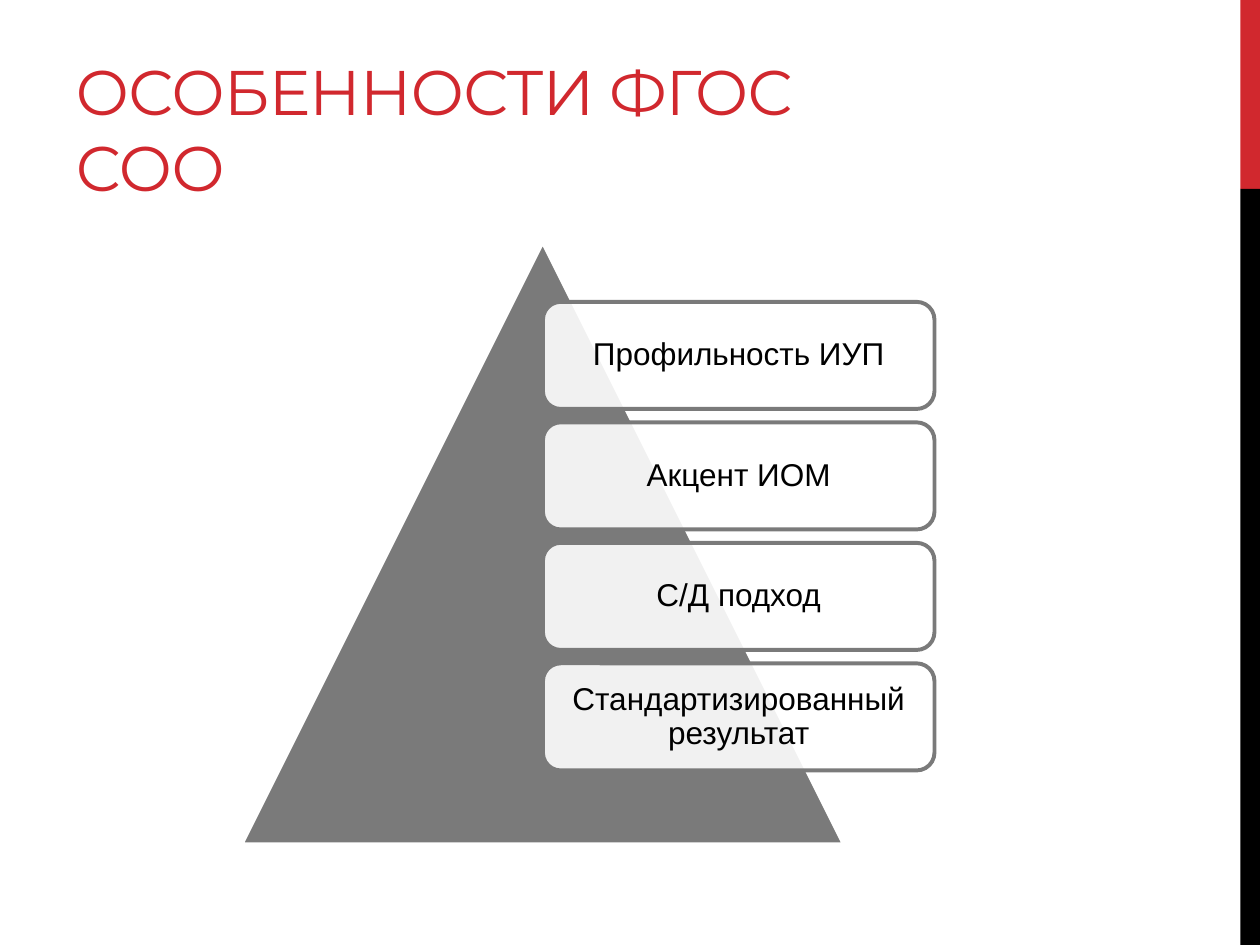
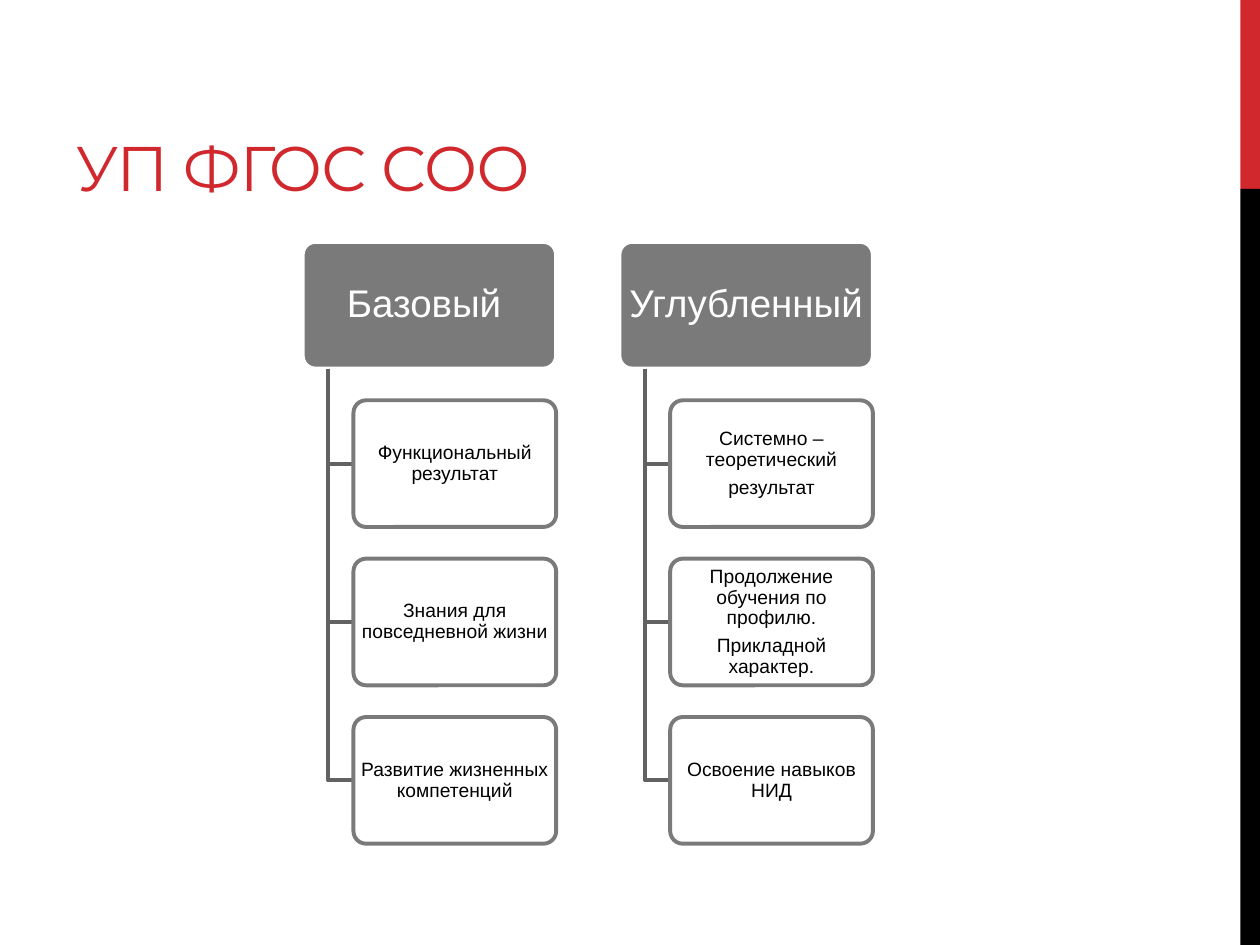
import pptx
import pptx.dml.color
import pptx.enum.shapes
import pptx.enum.text
import pptx.oxml
import pptx.oxml.ns
import pptx.util

Pt = pptx.util.Pt
RGB = pptx.dml.color.RGBColor.from_string
KIND = pptx.enum.shapes.MSO_SHAPE
ALIGN = pptx.enum.text.PP_ALIGN
ANCHOR = pptx.enum.text.MSO_ANCHOR
qn = pptx.oxml.ns.qn

COLORS = {
    "red": "D1282E",
    "black": "000000",
    "white": "FFFFFF",
    "gray": "7A7A7A",
    "stem": "626262",
}


def add_box(slide, kind, place, fill, line=None, alpha=None):
    """Add a flat shape; place is left, top, width, height, alpha a percentage."""
    box = slide.shapes.add_shape(kind, *[Pt(n) for n in place])
    box.shadow.inherit = False
    box.fill.solid()
    box.fill.fore_color.rgb = RGB(COLORS[fill])
    if alpha:
        color = box.element.spPr.find(qn("a:solidFill"))[0]
        node = pptx.oxml.parse_xml(f'<a:alpha {pptx.oxml.ns.nsdecls("a")}/>')
        node.set("val", str(alpha * 1000))
        color.append(node)
    if line:
        box.line.color.rgb = RGB(COLORS[line])
        box.line.width = Pt(2.25)
    else:
        box.line.fill.background()
    return box


def add_text(box, text, size, color, side, edge):
    """Centre text in a box; side and edge are the insets across and down."""
    frame = box.text_frame
    frame.word_wrap = True
    frame.vertical_anchor = ANCHOR.MIDDLE
    frame.margin_left = frame.margin_right = Pt(side)
    frame.margin_top = frame.margin_bottom = Pt(edge)
    frame.text = text
    for par in frame.paragraphs:
        par.alignment = ALIGN.CENTER
        par.line_spacing = 0.9
        par.space_after = Pt(0.35 * size)
        par.font.size = Pt(size)
        par.font.name = "Arial"
        par.font.color.rgb = RGB(COLORS[color])


deck = pptx.Presentation()
deck.slide_width, deck.slide_height = Pt(720), Pt(540)
layout = deck.slide_layouts[5]

# Titles
slides = []
for text in ("ОСОБЕННОСТИ ФГОС СОО", "УП ФГОС СОО"):
    slide = deck.slides.add_slide(layout)
    title = slide.shapes.title
    title.left, title.top, title.width, title.height = Pt(36), Pt(12), Pt(456), Pt(108)
    frame = title.text_frame
    frame.text = text
    frame.word_wrap = True
    frame.auto_size = pptx.enum.text.MSO_AUTO_SIZE.NONE
    frame.vertical_anchor = ANCHOR.BOTTOM
    par = frame.paragraphs[0]
    par.alignment = ALIGN.LEFT
    par.font.size = Pt(36)
    par.font.name = "Montserrat"
    par.font.color.rgb = RGB(COLORS["red"])
    for node in title.element.iter(qn("a:defRPr")):
        node.set("spc", "-60")
    slides.append(slide)
first, second = slides

# Side bands, moved to the layout that both slides share
for top, height, color in ((0, 108, "red"), (108, 432, "black")):
    band = add_box(first, KIND.RECTANGLE, (708.75, top, 11.25, height), color)
    layout.shapes.element.append(band.element)

# Pyramid with four labels
add_box(first, KIND.ISOSCELES_TRIANGLE, (138, 138.25, 344.25, 344.25), "gray", "white")
labels = ["Профильность ИУП", "Акцент ИОМ", "С/Д подход", "Стандартизированный результат"]
for row, text in enumerate(labels):
    place = (310.25, 172.5 + 68.85 * row, 223.75, 61.2)
    box = add_box(first, KIND.ROUNDED_RECTANGLE, place, "white", "gray", 90)
    add_text(box, text, 18, "black", 5, 5)

# Two trees: a head, with three cells hung from its stem
trees = {
    "Базовый ": [
        "Функциональный результат",
        "Знания для повседневной жизни",
        "Развитие жизненных компетенций",
    ],
    "Углубленный ": [
        "Системно – теоретический\nрезультат",
        "Продолжение обучения по профилю.\nПрикладной характер.",
        "Освоение навыков НИД",
    ],
}
TOP, HIGH, WIDE = 138.25, 72.4, 144.8
for col, (head, cells) in enumerate(trees.items()):
    left = 173 + 181 * col
    box = add_box(second, KIND.ROUNDED_RECTANGLE, (left, TOP, WIDE, HIGH), "gray", "white")
    box.adjustments[0] = 0.1
    add_text(box, head, 22, "white", 2, 2.2)
    stem, edge = left + 0.1 * WIDE, left + 0.2 * WIDE
    for row, text in enumerate(cells):
        top = TOP + 1.25 * HIGH * (row + 1)
        mid = top + HIGH / 2
        path = second.shapes.build_freeform(Pt(stem), Pt(TOP + HIGH))
        path.add_line_segments([(Pt(stem), Pt(mid)), (Pt(edge), Pt(mid))], close=False)
        elbow = path.convert_to_shape()
        elbow.shadow.inherit = False
        elbow.fill.background()
        elbow.line.color.rgb = RGB(COLORS["stem"])
        elbow.line.width = Pt(2.25)
        place = (edge, top, 0.8 * WIDE, HIGH)
        box = add_box(second, KIND.ROUNDED_RECTANGLE, place, "white", "gray", 90)
        box.adjustments[0] = 0.1
        add_text(box, text, 11, "black", 1.6, 1.6)

deck.save("out.pptx")
